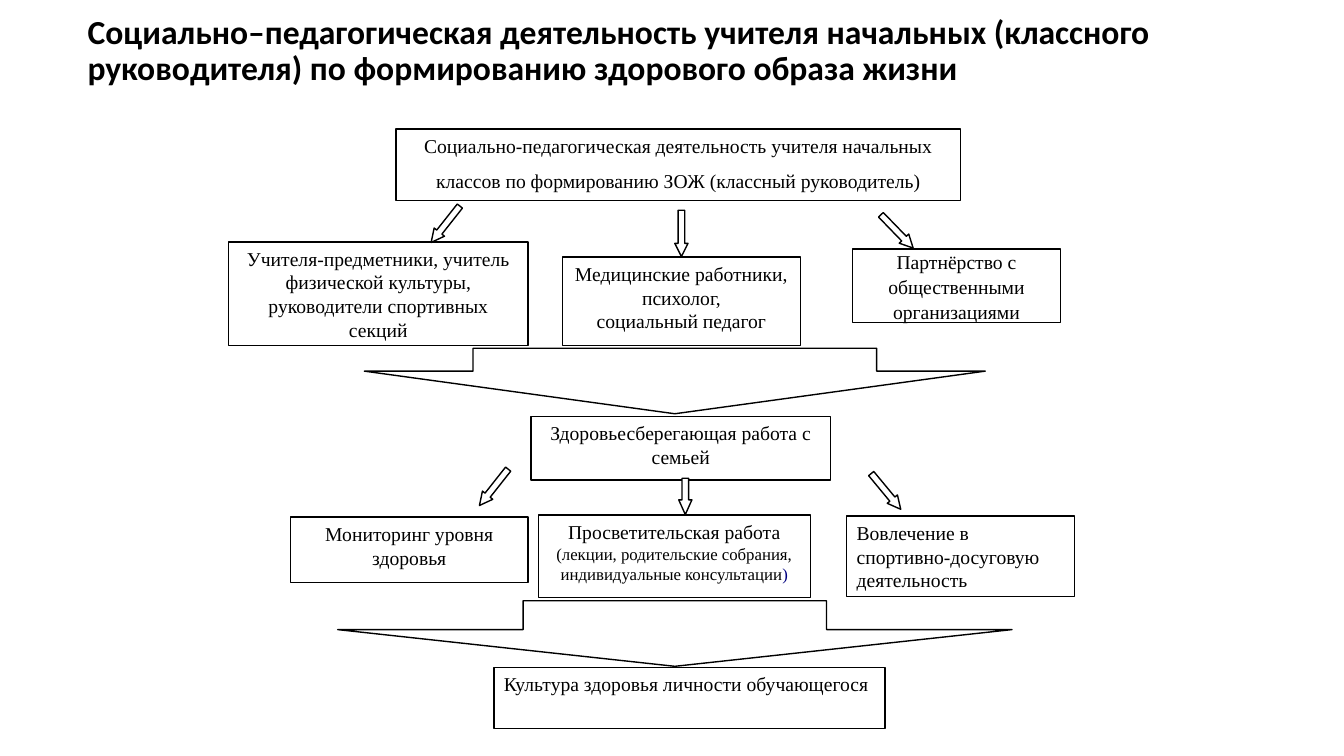
"""Build the slide on health-building work of a primary school teacher."""
from dataclasses import dataclass

from pptx import Presentation
from pptx import util as u
from pptx.dml.color import RGBColor
from pptx.enum import shapes, text

TITLE = ("Социально–педагогическая деятельность учителя начальных (классного "
         "руководителя) по формированию здорового образа жизни")
TITLE_AREA = (55.4, -5, 843.1, 84.2)


@dataclass(frozen=True)
class Theme:
    """Colours, fonts and sizes of the slide."""
    ink: str = "000000"
    paper: str = "FFFFFF"
    accent: str = "000080"
    title_font: str = "Calibri"
    body_font: str = "Times New Roman"
    title: float = 24
    body: float = 14
    detail: float = 12
    line: float = 1


THEME = Theme()
CENTER, LEFT = text.PP_ALIGN.CENTER, text.PP_ALIGN.LEFT
TOP, MIDDLE = text.MSO_ANCHOR.TOP, text.MSO_ANCHOR.MIDDLE
DETAIL = {"size": THEME.detail}
BRACKET = {"size": THEME.detail, "color": THEME.accent}

BOXES = [
    ((283, 92.2, 403.2, 51.1), [
        ([("Социально-педагогическая деятельность учителя начальных", {})], {}),
        ([("классов по формированию ЗОЖ (классный руководитель)", {})],
         {"line_spacing": 1.5})], TOP),
    ((401.8, 183.6, 169.9, 63.4), [
        ([("Медицинские работники, психолог,", {})], {}),
        ([("социальный педагог", {})], {})], TOP),
    ((163.4, 172.8, 213.8, 74.2), [
        ([("Учителя-предметники, учитель физической культуры, "
           "руководители спортивных секций", {})], {})], TOP),
    ((379.4, 297.4, 213.8, 45.4), [
        ([("Здоровьесберегающая работа с семьей", {})],
         {"space_before": u.Pt(6)})], TOP),
    ((207.4, 369.4, 169.9, 46.8), [
        ([("Мониторинг уровня здоровья", {})], {})], TOP),
    ((384.5, 367.9, 194.4, 59), [
        ([("Просветительская работа", {})], {}),
        ([("(лекции, родительские собрания, индивидуальные консультации", DETAIL),
          (")", BRACKET)], {})], TOP),
    ((604.8, 368.6, 162.7, 57.6), [
        ([("Вовлечение в спортивно-досуговую деятельность", {})],
         {"alignment": LEFT})], TOP),
    ((352.8, 476.6, 279.4, 43.9), [
        ([("Культура здоровья личности обучающегося", {})],
         {"alignment": LEFT})], TOP),
    ((609.1, 177.8, 148.3, 52.6), [
        ([("Партнёрство с общественными организациями", {})],
         {"line_spacing": 1.07, "space_after": u.Pt(8)})], MIDDLE),
]

SMALL, WIDE = shapes.MSO_SHAPE.LEFT_ARROW, shapes.MSO_SHAPE.RIGHT_ARROW
ARROWS = [
    (SMALL, (301.7, 155.5, 33.1, 9.4), 308.3, (0.5, 1)),
    (SMALL, (624.2, 160.6, 33.1, 9.4), 225.9, (0.5, 1)),
    (SMALL, (476.6, 349.9, 25.9, 9.4), 270, (0.5, 1.12)),
    (SMALL, (336.2, 343.4, 33.1, 9.4), 308.3, (0.5, 1)),
    (SMALL, (616.3, 346.3, 33.1, 9.4), 230.4, (0.5, 1)),
    (WIDE, (458.6, 50.4, 46.8, 443.5), 90, (0.65, 0.65)),
    (WIDE, (458.6, 211.7, 46.8, 481.7), 90, (0.45, 0.56)),
    (SMALL, (470.2, 162, 33.1, 9.4), 270, (0.5, 1)),
]


def apply(target, values):
    for name, value in values.items():
        setattr(target, name, value)


def style_run(run, font, size, color, bold=False):
    apply(run.font, {"name": font, "size": u.Pt(size), "bold": bold})
    run.font.color.rgb = RGBColor.from_string(color)


def add_outline(slide, kind, area):
    outline = slide.shapes.add_shape(kind, *map(u.Pt, area))
    outline.shadow.inherit = False
    outline.fill.solid()
    outline.fill.fore_color.rgb = RGBColor.from_string(THEME.paper)
    outline.line.color.rgb = RGBColor.from_string(THEME.ink)
    outline.line.width = u.Pt(THEME.line)
    return outline


def add_box(slide, area, paragraphs, anchor):
    frame = add_outline(slide, shapes.MSO_SHAPE.RECTANGLE, area).text_frame
    apply(frame, {"word_wrap": True, "vertical_anchor": anchor})
    for index, (runs, layout) in enumerate(paragraphs):
        paragraph = frame.add_paragraph() if index else frame.paragraphs[0]
        apply(paragraph, {"alignment": CENTER, **layout})
        for words, look in runs:
            run = paragraph.add_run()
            run.text = words
            style_run(run, **{"font": THEME.body_font, "size": THEME.body,
                              "color": THEME.ink, **look})


def add_arrow(slide, kind, area, rotation, adjustments):
    arrow = add_outline(slide, kind, area)
    arrow.rotation = rotation
    for index, value in enumerate(adjustments):
        arrow.adjustments[index] = value


def add_title(slide):
    title = slide.shapes.title
    sides = ("left", "top", "width", "height")
    apply(title, dict(zip(sides, map(u.Pt, TITLE_AREA))))
    frame = title.text_frame
    frame.text = TITLE
    apply(frame, {"word_wrap": True, "vertical_anchor": MIDDLE,
                  "auto_size": text.MSO_AUTO_SIZE.NONE})
    heading = frame.paragraphs[0]
    apply(heading, {"alignment": LEFT, "line_spacing": 0.9})
    style_run(heading.runs[0], THEME.title_font, THEME.title, THEME.ink, True)


def main():
    deck = Presentation()
    apply(deck, {"slide_width": u.Pt(960), "slide_height": u.Pt(540)})
    slide = deck.slides.add_slide(deck.slide_layouts[5])
    add_title(slide)
    for box in BOXES:
        add_box(slide, *box)
    for arrow in ARROWS:
        add_arrow(slide, *arrow)
    deck.save("out.pptx")


if __name__ == "__main__":
    main()
